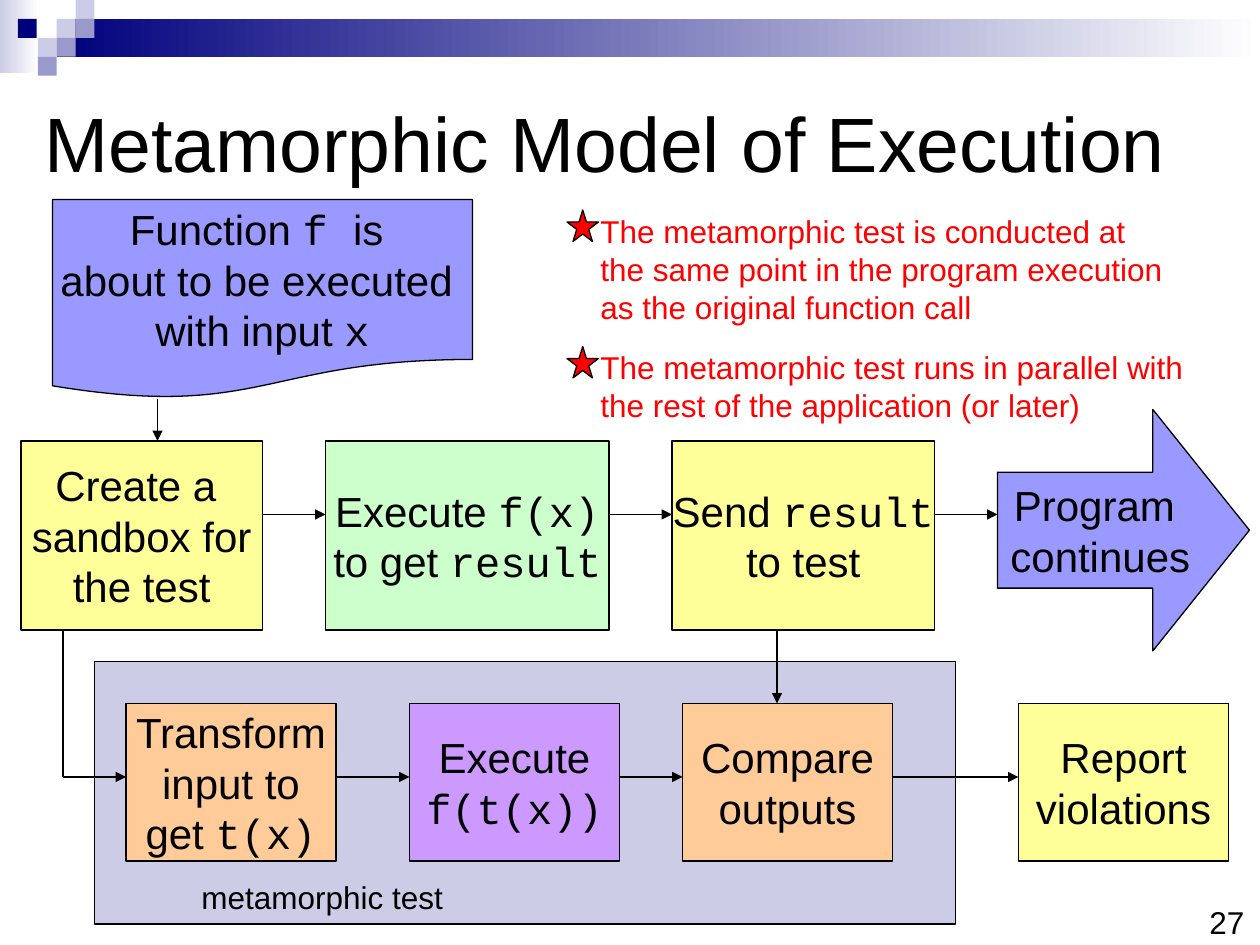
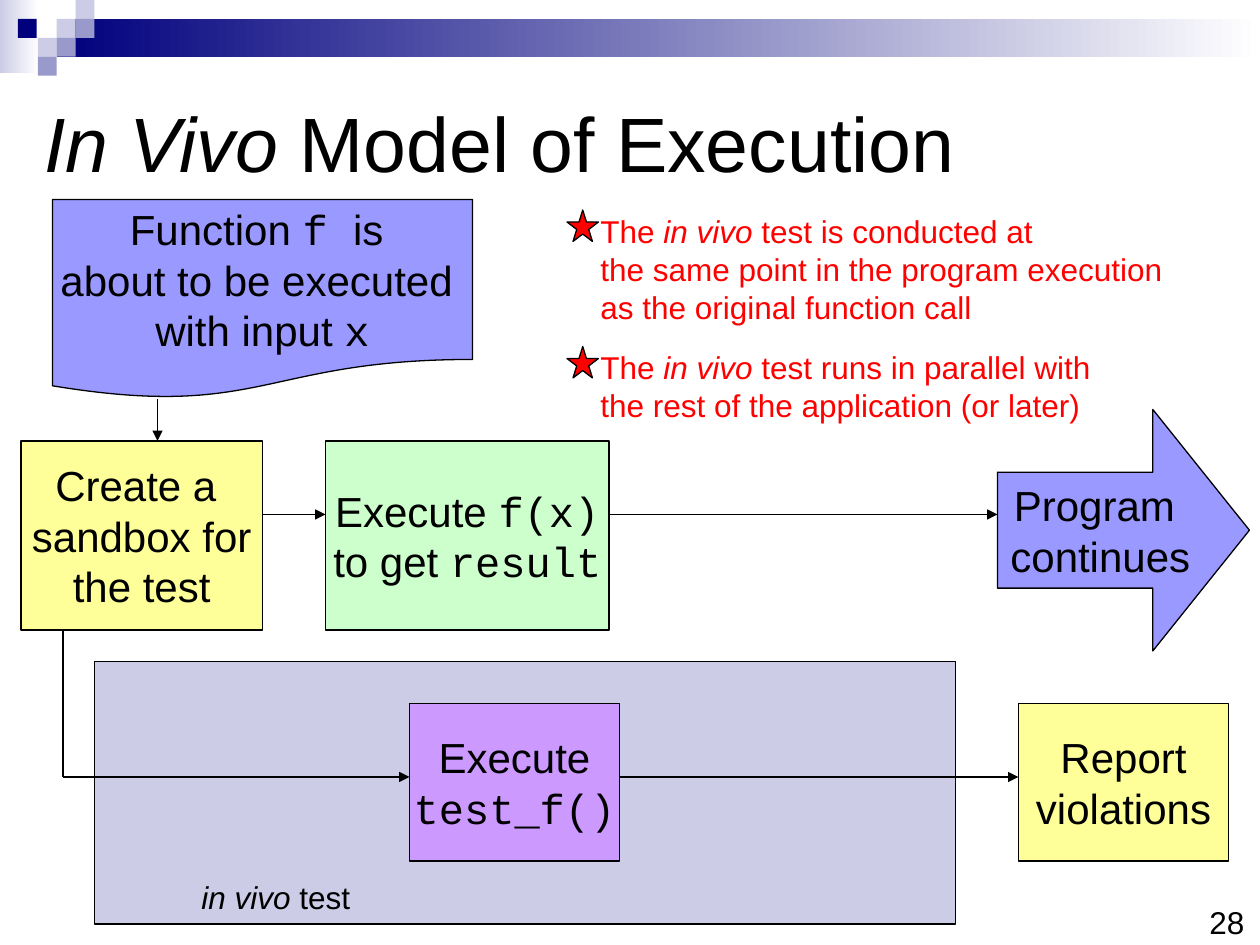
"""Two flow diagrams comparing metamorphic and in vivo test execution."""
from pptx import Presentation
from pptx.dml.color import RGBColor
from pptx.enum.shapes import MSO_CONNECTOR, MSO_SHAPE
from pptx.enum.text import MSO_ANCHOR, MSO_AUTO_SIZE, PP_ALIGN
from pptx.oxml.ns import qn
from pptx.util import Emu, Pt
from lxml import etree

EMU_PER_PX = 7620
RECTANGLE = MSO_SHAPE.RECTANGLE
DOCUMENT = MSO_SHAPE.FLOWCHART_DOCUMENT
RIGHT_ARROW = MSO_SHAPE.RIGHT_ARROW
STAR = MSO_SHAPE.STAR_5_POINT
STRAIGHT = MSO_CONNECTOR.STRAIGHT
MIDDLE = MSO_ANCHOR.MIDDLE
NO_AUTOFIT = MSO_AUTO_SIZE.NONE
LEFT, CENTER = PP_ALIGN.LEFT, PP_ALIGN.CENTER

BODY_FONT, CODE_FONT = "Arial", "Courier New"
COLORS = {
    "black": "000000", "white": "FFFFFF", "red": "FF0000",
    "navy": "00007D", "slate": "9999CC", "mist": "CCCCE6",
    "periwinkle": "9999FF", "yellow": "FFFF99", "green": "CCFFCC",
    "orange": "FFCC99", "violet": "CC99FF",
}
TILE = 18
BAND_TILES = [
    (54, 18, "mist"), (72, 0, "mist"), (72, 18, "slate"), (36, 36, "mist"),
    (17, 18, "navy"), (54, 36, "slate"), (36, 54, "slate"),
]
MAIN_TOP, MAIN_HEIGHT, MAIN_ARROW_Y = 420, 180, 490
TEST_TOP, TEST_WIDTH, TEST_HEIGHT, TEST_ARROW_Y = 670, 200, 150, 740
SANDBOX_EXIT_X = 60


def px(*lengths):
    """Convert pixel lengths to EMU."""
    return [Emu(length * EMU_PER_PX) for length in lengths]


def rgb(color):
    """Look up a named colour."""
    return RGBColor.from_string(COLORS[color])


def write_text(text_frame, text, size, color="black", alignment=LEFT):
    """Write lines in which `code` is monospaced and *words* are italic."""
    for number, line in enumerate(text.split("\n")):
        paragraph = text_frame.add_paragraph() if number else text_frame.paragraphs[0]
        paragraph.alignment = alignment
        for code_index, part in enumerate(line.split("`")):
            for italic_index, words in enumerate(part.split("*")):
                if not words:
                    continue
                run = paragraph.add_run()
                run.text = words
                run.font.name = CODE_FONT if code_index % 2 else BODY_FONT
                run.font.size = Pt(size)
                run.font.italic = bool(italic_index % 2)
                run.font.color.rgb = rgb(color)


def add_block(slide, kind, left, top, width, height, fill, text="", outlined=True):
    """Add a filled shape with optional centred text."""
    shape = slide.shapes.add_shape(kind, *px(left, top, width, height))
    shape.shadow.inherit = False
    shape.fill.solid()
    shape.fill.fore_color.rgb = rgb(fill)
    if outlined:
        shape.line.color.rgb = rgb("black")
        shape.line.width = Pt(0.75)
    else:
        shape.line.fill.background()
    if text:
        shape.text_frame.word_wrap = False
        shape.text_frame.vertical_anchor = MIDDLE
        write_text(shape.text_frame, text, 24, alignment=CENTER)
    return shape


def add_gradient(slide, left, top, width, height, color):
    """Add a bar fading from a colour to white."""
    bar = add_block(slide, RECTANGLE, left, top, width, height, color, outlined=False)
    bar.fill.gradient()
    bar.fill.gradient_angle = 0
    for stop, name in zip(bar.fill.gradient_stops, (color, "white")):
        stop.color.rgb = rgb(name)


def add_label(slide, left, top, width, height, text, color="black"):
    """Add an unwrapped 18 point text box."""
    box = slide.shapes.add_textbox(*px(left, top, width, height))
    box.text_frame.word_wrap = False
    write_text(box.text_frame, text, 18, color)


def add_line(slide, start_x, start_y, end_x, end_y, arrow=True):
    """Add a straight line, with an arrowhead at its end by default."""
    connector = slide.shapes.add_connector(STRAIGHT, *px(start_x, start_y, end_x, end_y))
    connector.line.color.rgb = rgb("black")
    connector.line.width = Pt(1)
    if arrow:
        etree.SubElement(connector.line._get_or_add_ln(), qn("a:tailEnd"), type="triangle")
    etree.SubElement(connector._element.spPr, qn("a:effectLst"))


def add_main_step(slide, left, width, fill, text):
    """Add a box to the row of the running program."""
    add_block(slide, RECTANGLE, left, MAIN_TOP, width, MAIN_HEIGHT, fill, text)


def add_test_step(slide, left, fill, text):
    """Add a box to the row of the test."""
    add_block(slide, RECTANGLE, left, TEST_TOP, TEST_WIDTH, TEST_HEIGHT, fill, text)


def add_arrows(slide, y, spans):
    """Add horizontal arrows at one height."""
    for start_x, end_x in spans:
        add_line(slide, start_x, y, end_x, y)


def add_note(slide, star_top, width, height, text):
    """Add a red remark marked with a star."""
    add_label(slide, 560, star_top - 4, width, height, text, "red")
    add_block(slide, STAR, 540, star_top, 30, 30, "red")


def start_slide(presentation, title, number):
    """Add a slide with the band, title and slide number."""
    slide = presentation.slides.add_slide(presentation.slide_layouts[5])
    add_gradient(slide, 0, 0, 37, 70, "mist")
    add_gradient(slide, 54, 18, 1146, 36, "navy")
    for left, top, color in BAND_TILES:
        add_block(slide, RECTANGLE, left, top, TILE, TILE, color, outlined=False)
    add_label(slide, 1140, 854, 61, 48, number)
    heading = slide.shapes.title
    heading.left, heading.top, heading.width, heading.height = px(30, 60, 1170, 150)
    heading.text_frame.auto_size = NO_AUTOFIT
    heading.text_frame.vertical_anchor = MIDDLE
    write_text(heading.text_frame, title, 44)
    return slide


def add_shared_flow(slide, test_name, label_width, note_width, test_call):
    """Add the steps and remarks common to both models."""
    add_block(slide, RECTANGLE, 90, 630, 820, 250, "mist")
    add_label(slide, 180, 830, label_width, 48, f"{test_name} test")
    add_block(slide, DOCUMENT, 50, 190, 400, 190, "periwinkle",
              "Function `f `is \nabout to be executed \nwith input `x`")
    add_main_step(slide, 20, 230, "yellow", "Create a \nsandbox for\nthe test")
    add_main_step(slide, 310, 270, "green", "Execute `f(x)`\nto get `result`")
    program = add_block(slide, RIGHT_ARROW, 950, 390, 240, 230, "periwinkle",
                        "Program \ncontinues")
    program.adjustments[0], program.adjustments[1] = 0.48, 0.4
    add_test_step(slide, 390, "violet", f"Execute\n`{test_call}`")
    add_test_step(slide, 970, "yellow", "Report\nviolations")
    add_line(slide, 150, 380, 150, MAIN_TOP)
    add_line(slide, SANDBOX_EXIT_X, MAIN_TOP + MAIN_HEIGHT,
             SANDBOX_EXIT_X, TEST_ARROW_Y, arrow=False)
    add_note(slide, 200, 559, 120,
             f"The {test_name} test is conducted at\n"
             "the same point in the program execution\nas the original function call")
    add_note(slide, 330, note_width, 85,
             f"The {test_name} test runs in parallel with\n"
             "the rest of the application (or later)")


def build_metamorphic(presentation):
    """Build the metamorphic model slide."""
    slide = start_slide(presentation, "Metamorphic Model of Execution", "27")
    add_shared_flow(slide, "metamorphic", 257, 580, "f(t(x))")
    add_main_step(slide, 640, 250, "yellow", "Send `result`\nto test")
    add_test_step(slide, 120, "orange", "Transform\ninput to\nget `t(x)`")
    add_test_step(slide, 650, "orange", "Compare\noutputs")
    add_arrows(slide, MAIN_ARROW_Y, [(250, 310), (580, 640), (890, 950)])
    add_arrows(slide, TEST_ARROW_Y,
               [(SANDBOX_EXIT_X, 120), (320, 390), (590, 650), (850, 970)])
    add_line(slide, 740, MAIN_TOP + MAIN_HEIGHT, 740, TEST_TOP)


def build_in_vivo(presentation):
    """Build the in vivo model slide."""
    slide = start_slide(presentation, "*In Vivo *Model of Execution", "28")
    add_shared_flow(slide, "*in vivo*", 167, 496, "test_f()")
    add_arrows(slide, MAIN_ARROW_Y, [(250, 310), (580, 950)])
    add_arrows(slide, TEST_ARROW_Y, [(SANDBOX_EXIT_X, 390), (590, 970)])


def main():
    """Build and save the presentation."""
    presentation = Presentation()
    presentation.slide_width, presentation.slide_height = px(1200, 900)
    build_metamorphic(presentation)
    build_in_vivo(presentation)
    presentation.save("out.pptx")


if __name__ == "__main__":
    main()
